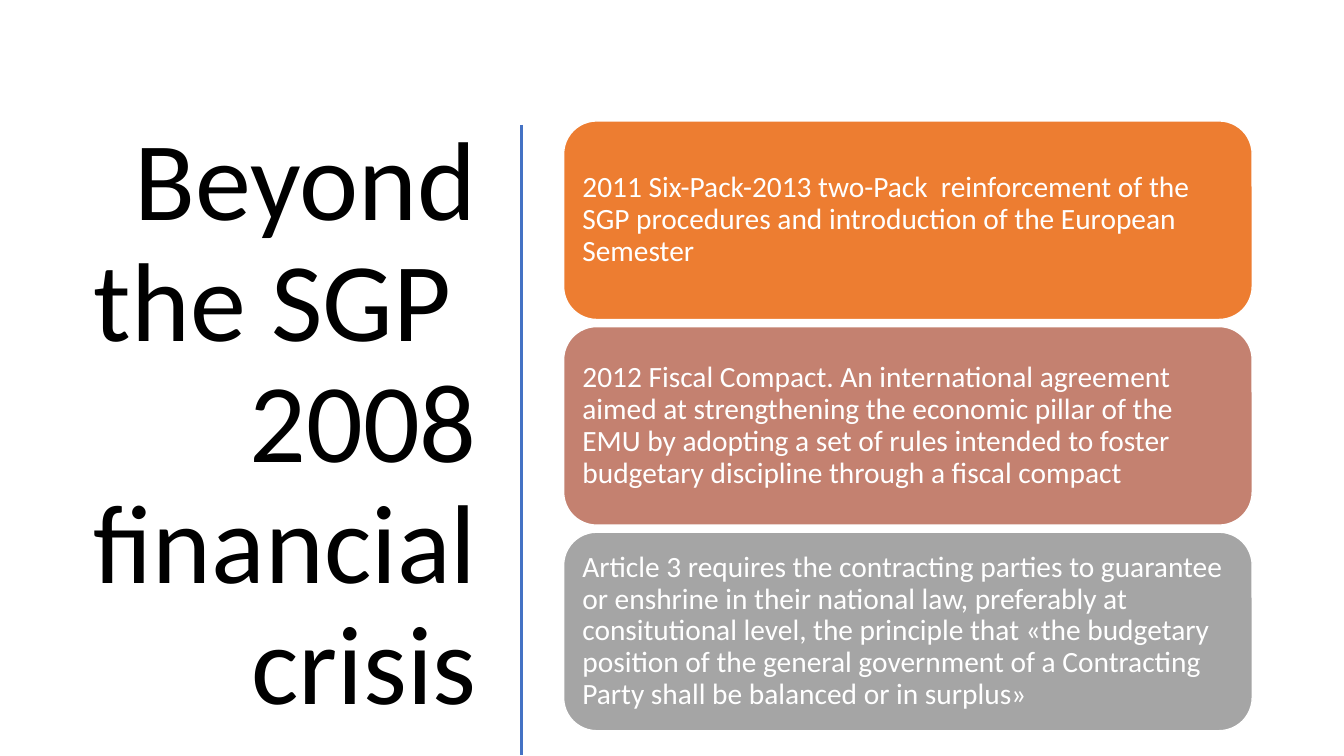
from dataclasses import dataclass

from lxml.etree import SubElement
from pptx import Presentation
from pptx.dml.color import RGBColor
from pptx.enum.shapes import MSO_CONNECTOR, MSO_SHAPE
from pptx.enum.text import MSO_ANCHOR, MSO_AUTO_SIZE, PP_ALIGN
from pptx.oxml.ns import qn
from pptx.util import Inches, Pt


@dataclass(frozen=True)
class Theme:
    font: str = "Calibri"
    title_size: int = 80
    card_size: int = 21
    title_color: str = "000000"
    card_text: str = "FFFFFF"
    card_border: str = "FFFFFF"
    divider: str = "4472C4"
    card_fills: tuple = ("ED7D31", "C48170", "A5A5A5")


THEME = Theme()

TITLE = "Beyond the SGP \v2008 financial crisis"
CARDS = (
    "2011 Six-Pack-2013 two-Pack  reinforcement of the SGP procedures and "
    "introduction of the European Semester",
    "2012 Fiscal Compact. An international agreement aimed at strengthening "
    "the economic pillar of the EMU by adopting a set of rules intended to "
    "foster budgetary discipline through a fiscal compact",
    "Article 3 requires the contracting parties to guarantee or enshrine in "
    "their national law, preferably at consitutional level, the principle "
    "that «the budgetary position of the general government of a Contracting "
    "Party shall be balanced or in surplus»",
)
CARD_LEFT, CARD_TOP = 5.59, 1.2
CARD_WIDTH, CARD_HEIGHT = 6.83, 1.97
CARD_PITCH = 2.04


def set_attrs(obj, values):
    for name, value in values.items():
        setattr(obj, name, value)


def rgb(color):
    return RGBColor.from_string(color)


def write_text(shape, text, size, color, align, inset):
    tf = shape.text_frame
    set_attrs(tf, {
        "word_wrap": True,
        "auto_size": MSO_AUTO_SIZE.NONE,
        "vertical_anchor": MSO_ANCHOR.MIDDLE,
        "margin_left": inset, "margin_right": inset,
        "margin_top": inset, "margin_bottom": inset,
    })
    p = tf.paragraphs[0]
    p.text = text
    set_attrs(p, {"alignment": align, "line_spacing": 0.9})
    for r in p.runs:
        set_attrs(r.font, {"name": THEME.font, "size": Pt(size)})
        r.font.color.rgb = rgb(color)


def add_title(s, text):
    title = s.shapes.title
    set_attrs(title, {
        "left": Inches(0.52), "top": Inches(1.17),
        "width": Inches(4.31), "height": Inches(6.11),
    })
    write_text(title, text, THEME.title_size, THEME.title_color,
               PP_ALIGN.RIGHT, Inches(0.1))


def add_divider(s, x, top, bottom):
    line = s.shapes.add_connector(MSO_CONNECTOR.STRAIGHT, Inches(x),
                                  Inches(top), Inches(x), Inches(bottom))
    line.line.color.rgb = rgb(THEME.divider)
    line.line.width = Pt(2)
    SubElement(line._element.spPr, qn("a:effectLst"))


def add_card(s, top, text, fill):
    card = s.shapes.add_shape(MSO_SHAPE.ROUNDED_RECTANGLE, Inches(CARD_LEFT),
                              Inches(top), Inches(CARD_WIDTH),
                              Inches(CARD_HEIGHT))
    card.shadow.inherit = False
    card.fill.solid()
    card.fill.fore_color.rgb = rgb(fill)
    card.line.color.rgb = rgb(THEME.card_border)
    card.line.width = Pt(1)
    write_text(card, text, THEME.card_size, THEME.card_text,
               PP_ALIGN.LEFT, Inches(0.09))


def main():
    prs = Presentation()
    set_attrs(prs, {"slide_width": Inches(13.33), "slide_height": Inches(7.5)})
    s = prs.slides.add_slide(prs.slide_layouts[5])
    add_title(s, TITLE)
    add_divider(s, 5.17, 1.24, 7.49)
    for i, (text, fill) in enumerate(zip(CARDS, THEME.card_fills)):
        add_card(s, CARD_TOP + i * CARD_PITCH, text, fill)
    prs.save("out.pptx")


if __name__ == "__main__":
    main()
